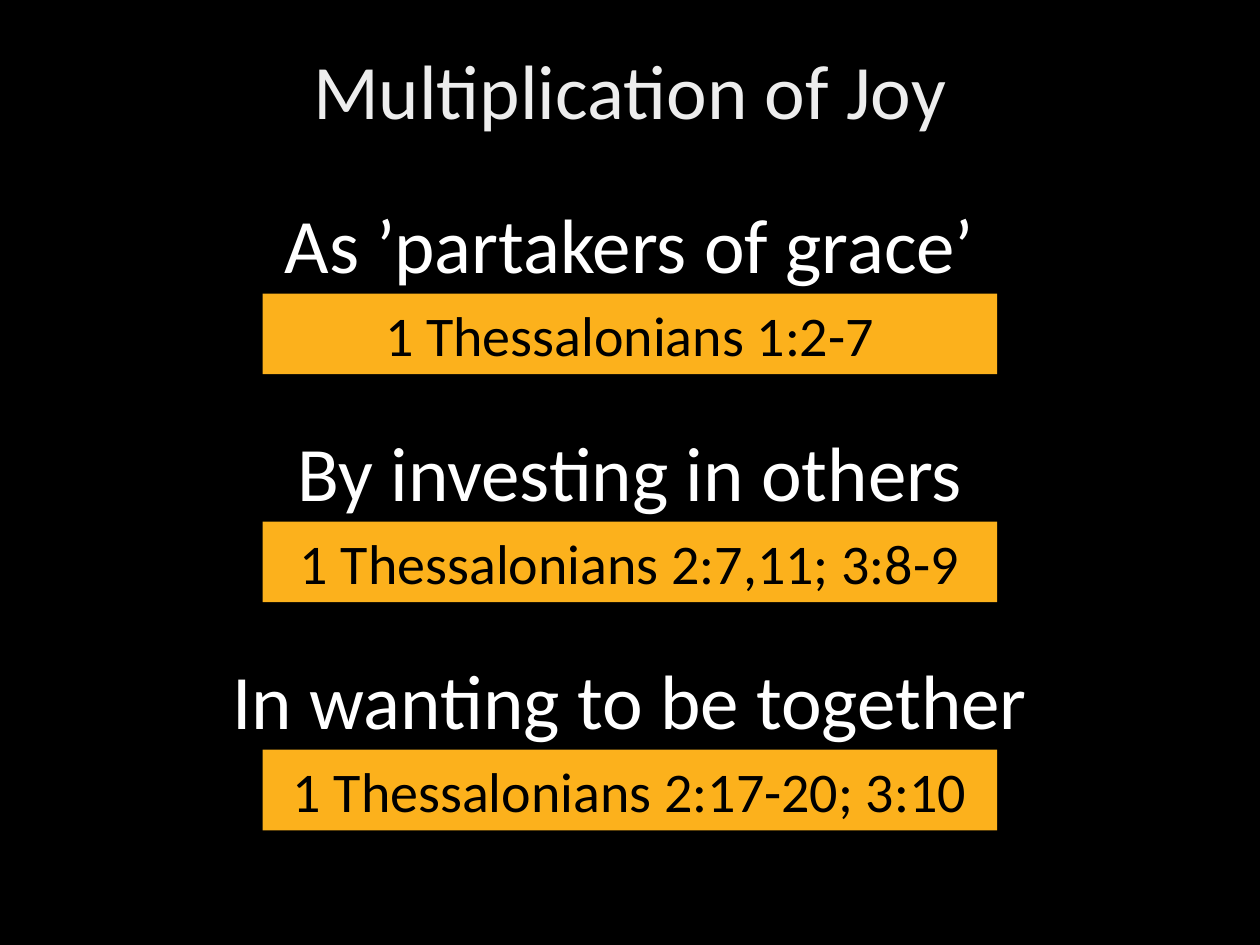
from pptx import Presentation
from pptx.dml.color import RGBColor
from pptx.enum.shapes import MSO_SHAPE
from pptx.enum.text import MSO_ANCHOR, MSO_AUTO_SIZE, PP_ALIGN
from pptx.util import Inches, Pt

RECTANGLE = MSO_SHAPE.RECTANGLE
MIDDLE = MSO_ANCHOR.MIDDLE
CENTER = PP_ALIGN.CENTER
GROW = MSO_AUTO_SIZE.SHAPE_TO_FIT_TEXT

BLACK = RGBColor(0x00, 0x00, 0x00)
WHITE = RGBColor(0xFF, 0xFF, 0xFF)
SILVER = RGBColor(0xED, 0xED, 0xED)
AMBER = RGBColor(0xFC, 0xB1, 0x1C)

WIDTH, HEIGHT = 10, 7.5
FIRST_TOP, POINT_PITCH = 1.66, 1.81
HEADING_HEIGHT, VERSE_HEIGHT = 0.67, 0.64
VERSE_WIDTH = 5.83

POINTS = [
    ("As ’partakers of grace’", 6.23, "1 Thessalonians 1:2-7"),
    ("By investing in others", 6.23, "1 Thessalonians 2:7,11; 3:8-9"),
    ("In wanting to be together", 6.86, "1 Thessalonians 2:17-20; 3:10"),
]


class SermonSlide:
    """Holds the slide and its style; every element is centred across it."""

    font_name = "Calibri"
    heading_size = Pt(44)
    verse_size = Pt(32)

    def __init__(self, presentation):
        title_only = presentation.slide_layouts[5]
        self.slide = presentation.slides.add_slide(title_only)
        background = self.slide.background.fill
        background.solid()
        background.fore_color.rgb = BLACK

    def centred(self, top, width, height):
        return [Inches(v) for v in ((WIDTH - width) / 2, top, width, height)]

    def set_text(self, shape, text, size, color, line_spacing=1.0):
        frame = shape.text_frame
        frame.text = text
        frame.word_wrap = True
        frame.vertical_anchor = MIDDLE
        paragraph = frame.paragraphs[0]
        paragraph.alignment = CENTER
        paragraph.line_spacing = line_spacing
        paragraph.font.name = self.font_name
        paragraph.font.size = size
        paragraph.font.color.rgb = color
        return frame

    def title(self, text, top, width, height):
        title = self.slide.shapes.title
        title.left, title.top, title.width, title.height = self.centred(
            top, width, height)
        self.set_text(title, text, self.heading_size, SILVER, 0.9)

    def heading(self, text, top, width):
        box = self.slide.shapes.add_textbox(
            *self.centred(top, width, HEADING_HEIGHT))
        frame = self.set_text(box, text, self.heading_size, WHITE, 0.8)
        frame.margin_left = frame.margin_right = Inches(0.07)
        frame.margin_top = frame.margin_bottom = Inches(0.04)
        frame.auto_size = GROW

    def verse(self, text, top):
        bar = self.slide.shapes.add_shape(
            RECTANGLE, *self.centred(top, VERSE_WIDTH, VERSE_HEIGHT))
        bar.shadow.inherit = False
        bar.fill.solid()
        bar.fill.fore_color.rgb = AMBER
        bar.line.fill.background()
        frame = self.set_text(bar, text, self.verse_size, BLACK)
        frame.auto_size = GROW


def main():
    presentation = Presentation()
    presentation.slide_width = Inches(WIDTH)
    presentation.slide_height = Inches(HEIGHT)

    sermon = SermonSlide(presentation)
    sermon.title("Multiplication of Joy", 0.33, 8.62, 0.84)
    for row, (heading, heading_width, verse) in enumerate(POINTS):
        top = FIRST_TOP + row * POINT_PITCH
        sermon.heading(heading, top, heading_width)
        sermon.verse(verse, top + HEADING_HEIGHT)

    presentation.save("out.pptx")


if __name__ == "__main__":
    main()
